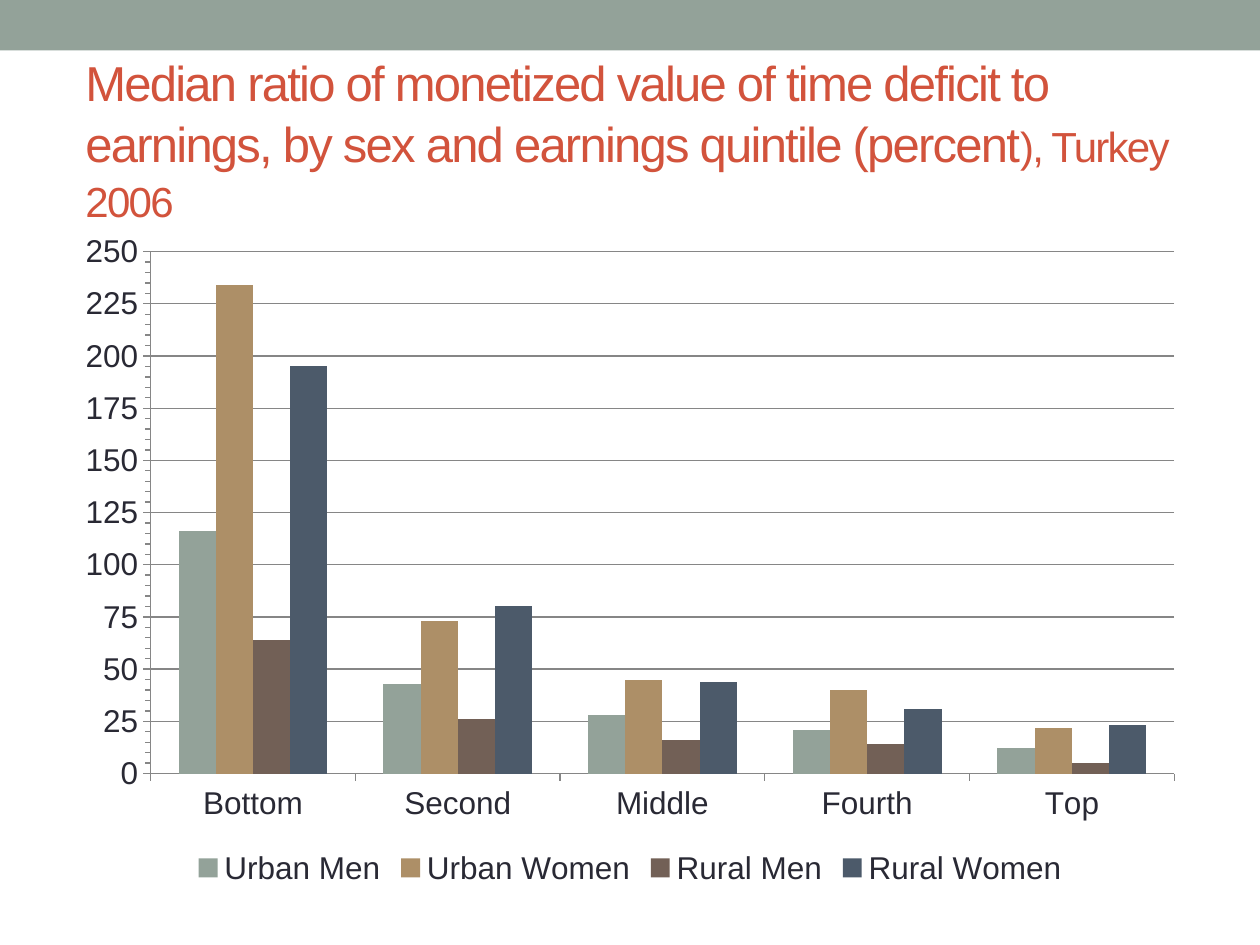
from dataclasses import dataclass

from pptx import Presentation
from pptx.chart.data import CategoryChartData
from pptx.dml.color import RGBColor
from pptx.enum.chart import XL_CHART_TYPE, XL_LEGEND_POSITION, XL_TICK_MARK
from pptx.enum.shapes import MSO_SHAPE
from pptx.enum.text import MSO_ANCHOR
from pptx.util import Inches, Pt

COLUMN = XL_CHART_TYPE.COLUMN_CLUSTERED
BOTTOM = XL_LEGEND_POSITION.BOTTOM
OUTSIDE = XL_TICK_MARK.OUTSIDE
NO_TICK = XL_TICK_MARK.NONE
RECT = MSO_SHAPE.RECTANGLE
MIDDLE = MSO_ANCHOR.MIDDLE


@dataclass(frozen=True)
class Theme:
    font: str = "Arial"
    sage: str = "93A299"
    tan: str = "AD8F67"
    brown: str = "726056"
    slate: str = "4C5A6A"
    title: str = "D2533C"
    text: str = "292934"
    grid: str = "868686"
    large: int = 28
    small: int = 24
    label: int = 18


@dataclass(frozen=True)
class Series:
    name: str
    color: str
    vals: tuple[int, ...]


@dataclass(frozen=True)
class Box:
    left: float
    top: float
    width: float
    height: float

    def lengths(self) -> tuple:
        return tuple(map(Inches, (self.left, self.top, self.width, self.height)))


THEME = Theme()
GROUPS = ("Bottom", "Second", "Middle", "Fourth", "Top")
SERIES = (
    Series("Urban Men", THEME.sage, (116, 43, 28, 21, 12)),
    Series("Urban Women", THEME.tan, (234, 73, 45, 40, 22)),
    Series("Rural Men", THEME.brown, (64, 26, 16, 14, 5)),
    Series("Rural Women", THEME.slate, (195, 80, 44, 31, 23)),
)


def rgb(color: str) -> RGBColor:
    return RGBColor.from_string(color)


def style(font, *, size: int, color: str) -> None:
    font.name = THEME.font
    font.size = Pt(size)
    font.color.rgb = rgb(color)


def add_text(slide, box: Box, runs, *, color: str, track: int = 0,
             spacing: float = 1.0, lift: float = 0.05) -> None:
    """Add one paragraph of (text, size) runs; lift is the bottom inset."""
    frame = slide.shapes.add_textbox(*box.lengths()).text_frame
    frame.word_wrap = True
    frame.vertical_anchor = MIDDLE
    frame.margin_bottom = Inches(lift)
    line = frame.paragraphs[0]
    line.line_spacing = spacing
    for text, size in runs:
        run = line.add_run()
        run.text = text
        style(run.font, size=size, color=color)
        run.font._element.set("spc", str(track * 100))


def add_band(slide, box: Box, color: str) -> None:
    band = slide.shapes.add_shape(RECT, *box.lengths())
    band.shadow.inherit = False
    band.fill.solid()
    band.fill.fore_color.rgb = rgb(color)
    band.line.fill.background()


def add_columns(slide, box: Box) -> None:
    data = CategoryChartData()
    data.categories = GROUPS
    for item in SERIES:
        data.add_series(item.name, item.vals)
    chart = slide.shapes.add_chart(COLUMN, *box.lengths(), data).chart
    style(chart.font, size=THEME.label, color=THEME.text)
    chart.has_title = False
    chart.has_legend = True
    chart.legend.position = BOTTOM
    chart.legend.include_in_layout = False

    # Columns
    plot = chart.plots[0]
    plot.gap_width = 150
    plot.overlap = 0
    plot.vary_by_categories = False
    for series, item in zip(plot.series, SERIES):
        series.format.fill.solid()
        series.format.fill.fore_color.rgb = rgb(item.color)

    # Axes and grid
    value, group = chart.value_axis, chart.category_axis
    value.minimum_scale, value.maximum_scale = 0, 250
    value.major_unit, value.minor_unit = 25, 5
    value.has_major_gridlines = True
    value.minor_tick_mark = OUTSIDE
    group.minor_tick_mark = NO_TICK
    for axis in (value, group):
        axis.major_tick_mark = OUTSIDE
    for part in (value, group, value.major_gridlines):
        part.format.line.color.rgb = rgb(THEME.grid)
        part.format.line.width = Pt(0.75)


def main() -> None:
    deck = Presentation()
    deck.slide_width, deck.slide_height = Inches(10), Inches(7.5)
    slide = deck.slides.add_slide(deck.slide_layouts[6])

    # Top band
    add_band(slide, Box(0, 0, 10, 0.4), THEME.sage)

    # Title
    add_text(
        slide, Box(0.58, 0.75, 9, 1.08),
        (("Median ratio of monetized value of time deficit to earnings, "
          "by sex and earnings quintile (percent", THEME.large),
         ("), Turkey 2006", THEME.small)),
        color=THEME.title, track=-1, spacing=1.05, lift=0.45,
    )

    # Chart
    add_columns(slide, Box(0.5, 1.75, 9, 5.33))
    deck.save("out.pptx")


if __name__ == "__main__":
    main()
